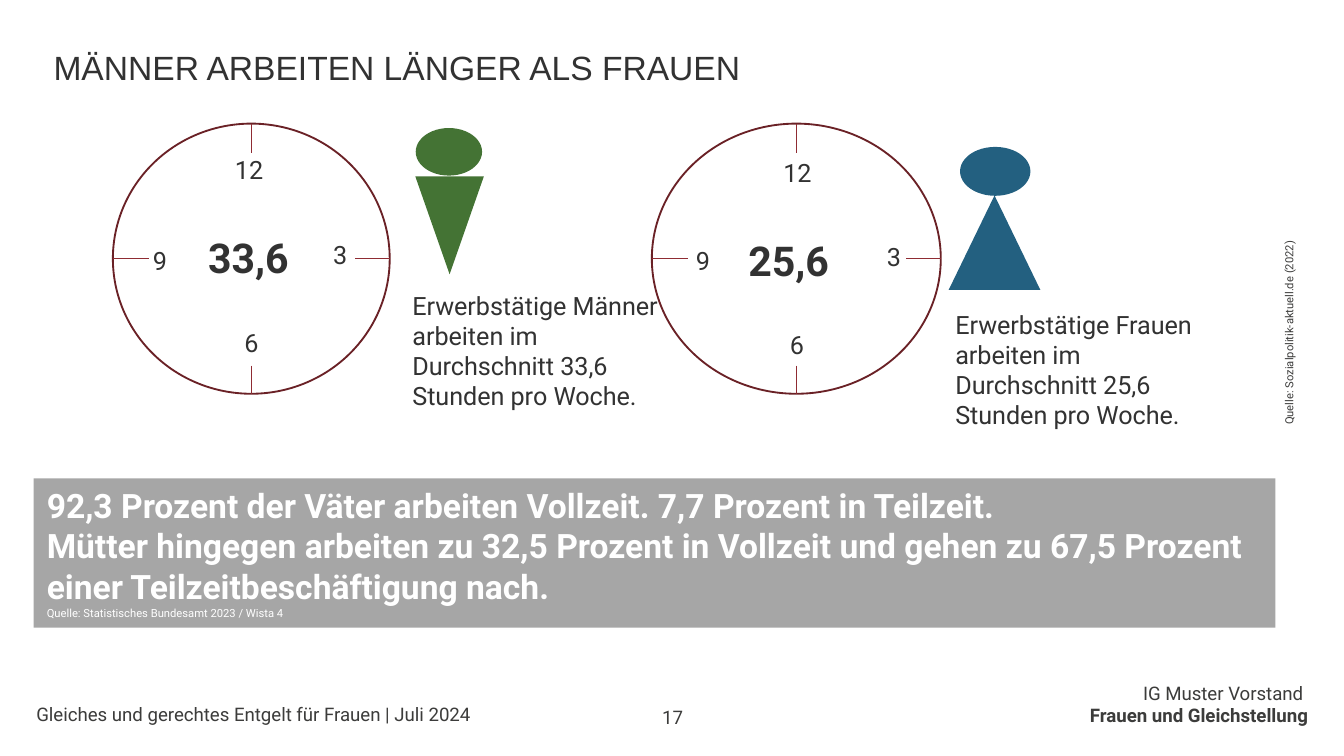
from pptx import Presentation
from pptx.dml.color import RGBColor as RGB
from pptx.enum.shapes import MSO_CONNECTOR as Conn, MSO_SHAPE as Kind
from pptx.enum.text import MSO_ANCHOR as Anchor, PP_ALIGN as Align
from pptx.oxml.ns import qn
from pptx.util import Inches, Pt
from lxml.etree import SubElement

INK = RGB(0x32, 0x32, 0x32)
GRAY = RGB(0x3C, 0x3C, 0x3B)
WHITE = RGB(0xFF, 0xFF, 0xFF)
BAND = RGB(0xA6, 0xA6, 0xA6)
GREEN = RGB(0x44, 0x73, 0x34)
BLUE = RGB(0x23, 0x60, 0x80)
RIM = RGB(0x6A, 0x21, 0x26)
TICK = RGB(0x8F, 0x2C, 0x33)


def write(frame, text, size=13.5, color=INK, font="Roboto", bold=False,
          align=Align.LEFT, anchor=Anchor.TOP, inset=True, first=True):
    frame.word_wrap = True
    frame.vertical_anchor = anchor
    if not inset:
        frame.margin_left = frame.margin_right = 0
        frame.margin_top = frame.margin_bottom = 0
    para = frame.paragraphs[0] if first else frame.add_paragraph()
    para.alignment = align
    run = para.add_run()
    run.text = text
    run.font.size = Pt(size)
    run.font.name = font
    run.font.bold = bold
    run.font.color.rgb = color


def label(slide, box, text, turn=0, **look):
    item = slide.shapes.add_textbox(*map(Inches, box))
    item.rotation = turn
    write(item.text_frame, text, **look)
    return item.text_frame


def shape(slide, kind, box, fill, line=None, turn=0):
    item = slide.shapes.add_shape(kind, *map(Inches, box))
    item.shadow.inherit = False
    item.rotation = turn
    item.fill.solid()
    item.fill.fore_color.rgb = fill
    if line is None:
        item.line.fill.background()
    else:
        item.line.color.rgb = line
        item.line.width = Pt(1)
        SubElement(item._element.spPr.find(qn("a:ln")), qn("a:miter"), lim="800000")
    return item


def tick(slide, *ends):
    item = slide.shapes.add_connector(Conn.STRAIGHT, *map(Inches, ends))
    item.line.color.rgb = TICK
    item.line.width = Pt(0.5)
    SubElement(item._element.spPr, qn("a:effectLst"))


def clock(slide, left, width, hours, marks):
    top, high = 0.92, 2.01
    right, base = left + width, top + high
    mid, axis = left + width / 2, top + high / 2
    shape(slide, Kind.OVAL, (left, top, width, high), WHITE, RIM)
    tick(slide, mid, top, mid, top + 0.22)
    tick(slide, mid, base - 0.21, mid, base)
    tick(slide, left, axis, left + 0.27, axis)
    tick(slide, right, axis, right - 0.26, axis)
    for text, x, y in marks:
        label(slide, (x, y, 0.5, 0.33), text)
    text, x, y = hours
    label(slide, (x, y, 1.1, 0.47), text, size=22, bold=True)


def figure(slide, head, body, color, turn=0):
    shape(slide, Kind.OVAL, head, color, color)
    shape(slide, Kind.ISOSCELES_TRIANGLE, body, color, color, turn)


def banner(slide):
    frame = shape(slide, Kind.RECTANGLE, (0.25, 3.56, 9.24, 1.11), BAND).text_frame
    write(frame, "92,3 Prozent der Väter arbeiten Vollzeit. 7,7 Prozent in Teilzeit.",
          size=18, color=WHITE, bold=True)
    write(frame, "Mütter hingegen arbeiten zu 32,5 Prozent in Vollzeit und gehen "
          "zu 67,5 Prozent einer Teilzeitbeschäftigung nach.",
          size=18, color=WHITE, bold=True, first=False)
    write(frame, "Quelle: Statistisches Bundesamt 2023 / Wista 4",
          size=6, color=WHITE, first=False)


def footer(slide):
    look = dict(size=10, color=GRAY, inset=False)
    label(slide, (0.27, 5.23, 3.89, 0.17),
          "Gleiches und gerechtes Entgelt für Frauen | Juli 2024",
          anchor=Anchor.BOTTOM, **look)
    frame = label(slide, (6.69, 5.07, 3.04, 0.34), "IG Muster Vorstand ",
                  align=Align.RIGHT, **look)
    write(frame, "Frauen und Gleichstellung", bold=True, align=Align.RIGHT,
          first=False, **look)
    label(slide, (4.52, 5.12, 0.97, 0.3), "17", align=Align.CENTER,
          anchor=Anchor.BOTTOM, **look)


def main():
    deck = Presentation()
    deck.slide_width, deck.slide_height = Inches(10), Inches(10 * 9 / 16)
    slide = deck.slides.add_slide(deck.slide_layouts[6])
    footer(slide)
    label(slide, (0.3, 0.3, 6.91, 0.4), "MÄNNER ARBEITEN LÄNGER ALS FRAUEN",
          size=18, font="Arial")
    clock(slide, 0.84, 2.06, ("33,6", 1.45, 1.68),
          [("12", 1.65, 1.1), ("3", 2.38, 1.73), ("6", 1.72, 2.39), ("9", 1.04, 1.78)])
    clock(slide, 4.85, 2.15, ("25,6", 5.47, 1.7),
          [("12", 5.73, 1.12), ("3", 6.5, 1.75), ("6", 5.78, 2.4), ("9", 5.08, 1.78)])
    figure(slide, (3.1, 0.96, 0.48, 0.34), (3.1, 1.32, 0.49, 0.7), GREEN, 180)
    figure(slide, (7.15, 1.1, 0.51, 0.35), (7.07, 1.47, 0.66, 0.68), BLUE)
    for x, y, group, hours in ((2.97, 2.11, "Männer", "33,6"),
                               (7.01, 2.25, "Frauen", "25,6")):
        label(slide, (x, y, 2.15, 1.01), f"Erwerbstätige {group} arbeiten im "
              f"Durchschnitt {hours} Stunden pro Woche.")
    banner(slide)
    label(slide, (8.77, 2.34, 1.64, 0.2), "Quelle: Sozialpolitik-aktuell.de (2022)",
          turn=270, size=6, color=GRAY)
    deck.save("out.pptx")


if __name__ == "__main__":
    main()
